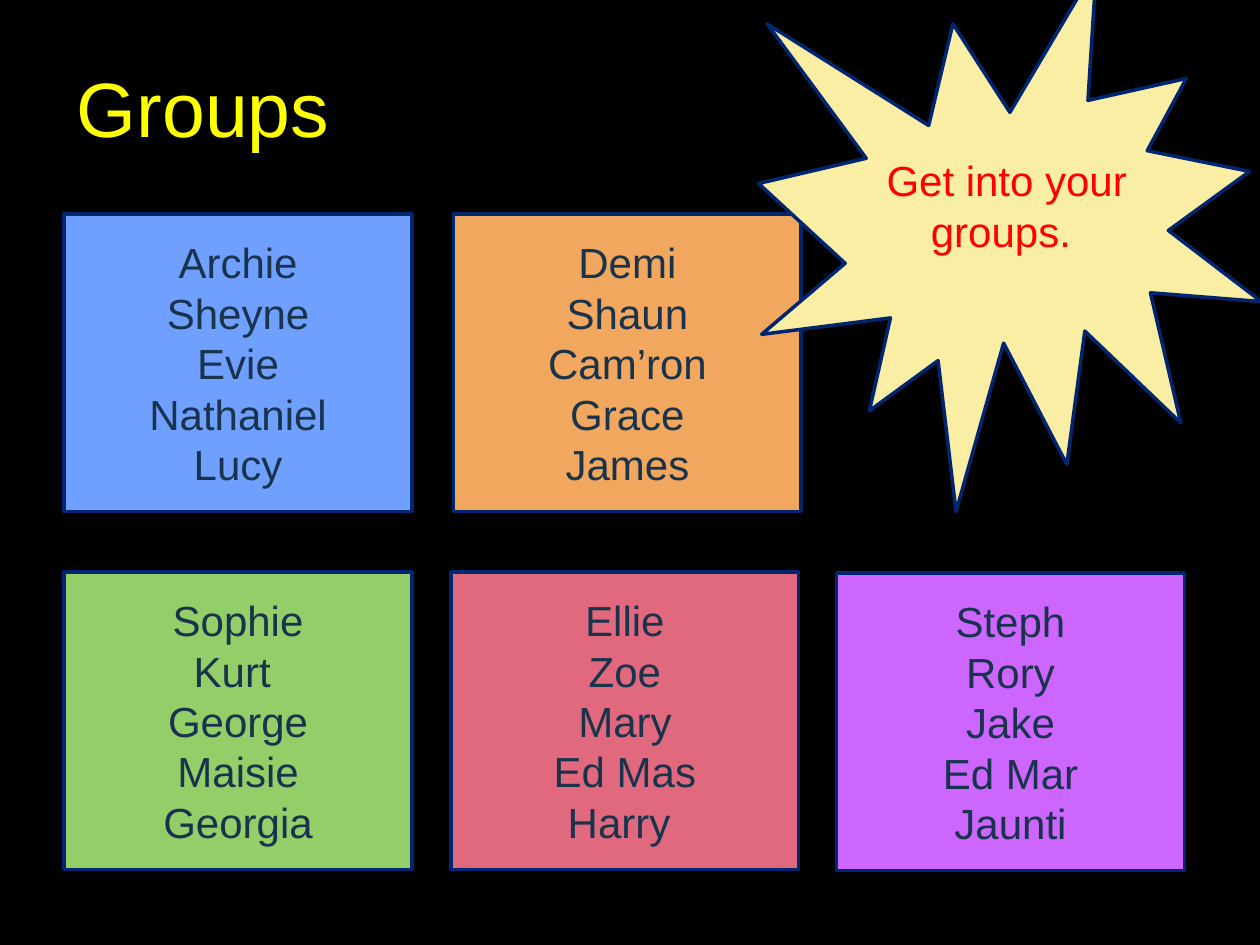
from dataclasses import dataclass

from pptx import Presentation
from pptx.dml.color import RGBColor
from pptx.enum.shapes import MSO_SHAPE
from pptx.enum.text import MSO_ANCHOR, PP_ALIGN
from pptx.shapes.autoshape import Shape
from pptx.slide import Slide
from pptx.util import Inches, Pt

COLORS = {
    "background": "000000",
    "title": "FFFF00",
    "outline": "002671",
    "name": "19334D",
    "call": "FF0000",
    "burst": "FAEEA4",
    "blue": "70A0FF",
    "orange": "F1A75D",
    "green": "94CE68",
    "red": "E1697D",
    "purple": "CC66FF",
}
FONT = "Arial"
CARD_WIDTH, CARD_HEIGHT = 2.76, 2.36


@dataclass
class Group:
    left: float
    top: float
    color: str
    names: list[str]


GROUPS = [
    Group(0.51, 1.7, "blue", ["Archie", "Sheyne", "Evie", "Nathaniel", "Lucy"]),
    Group(3.6, 1.7, "orange", ["Demi", "Shaun", "Cam’ron", "Grace", "James"]),
    Group(0.51, 4.54, "green", ["Sophie", "Kurt ", "George", "Maisie", "Georgia"]),
    Group(3.58, 4.54, "red", ["Ellie", "Zoe", "Mary", "Ed Mas", "Harry "]),
    Group(6.64, 4.55, "purple", ["Steph", "Rory", "Jake", "Ed Mar", "Jaunti"]),
]


def rgb(name: str) -> RGBColor:
    return RGBColor.from_string(COLORS[name])


def add_panel(s: Slide, kind: MSO_SHAPE, left: float, top: float, width: float,
              height: float, fill: str, lines: list[str], text_color: str) -> Shape:
    """Draw an outlined shape with one centred paragraph per line."""
    sp = s.shapes.add_shape(kind, Inches(left), Inches(top), Inches(width), Inches(height))
    sp.shadow.inherit = False
    sp.fill.solid()
    sp.fill.fore_color.rgb = rgb(fill)
    sp.line.color.rgb = rgb("outline")
    sp.line.width = Pt(2)
    tf = sp.text_frame
    tf.word_wrap = True
    tf.vertical_anchor = MSO_ANCHOR.MIDDLE
    tf.text = "\n".join(lines)
    for p in tf.paragraphs:
        p.alignment = PP_ALIGN.CENTER
        p.font.name = FONT
        p.font.size = Pt(24)
        p.font.color.rgb = rgb(text_color)
    return sp


def add_title(s: Slide, text: str) -> None:
    title = s.shapes.title
    title.left, title.top = Inches(0.51), Inches(0.22)
    title.width, title.height = Inches(9), Inches(1.25)
    tf = title.text_frame
    tf.text = text
    tf.vertical_anchor = MSO_ANCHOR.MIDDLE
    p = tf.paragraphs[0]
    p.alignment = PP_ALIGN.LEFT
    p.font.name = FONT
    p.font.size = Pt(44)
    p.font.color.rgb = rgb("title")


def main() -> None:
    prs = Presentation()
    prs.slide_width, prs.slide_height = Inches(10), Inches(7.5)
    s = prs.slides.add_slide(prs.slide_layouts[5])
    s.background.fill.solid()
    s.background.fill.fore_color.rgb = rgb("background")

    add_title(s, "Groups")
    for group in GROUPS:
        add_panel(s, MSO_SHAPE.RECTANGLE, group.left, group.top, CARD_WIDTH,
                  CARD_HEIGHT, group.color, group.names, "name")
    burst = add_panel(s, MSO_SHAPE.EXPLOSION1, 6.02, -0.27, 3.99, 4.33,
                      "burst", ["Get into your groups. "], "call")
    burst.text_frame.margin_bottom = Inches(0.31)

    prs.save("out.pptx")


if __name__ == "__main__":
    main()
